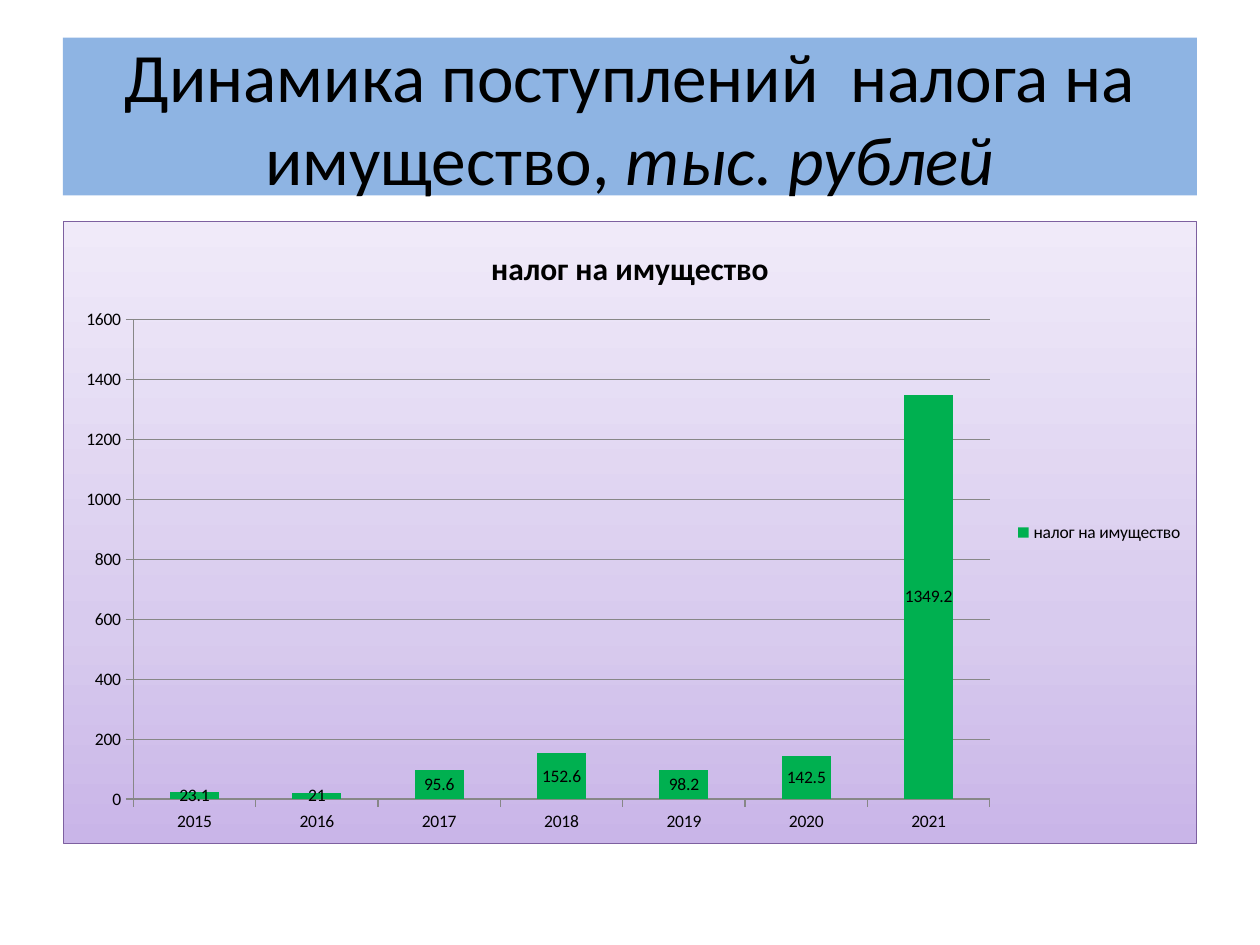
from lxml import etree
from pptx import Presentation, util as u
from pptx.chart.data import CategoryChartData
from pptx.dml.color import RGBColor
from pptx.enum import chart as ch, shapes, text

BLACK = RGBColor(0x00, 0x00, 0x00)
BLUE = RGBColor(0x8E, 0xB4, 0xE3)
GREEN = RGBColor(0x00, 0xB0, 0x50)
GREY = RGBColor(0x87, 0x87, 0x87)
PURPLE = RGBColor(0x7D, 0x60, 0xA0)
STOPS = [(0, "C9B5E8"), (35, "D8CBEE"), (100, "F0EAF9")]

NAME = "налог на имущество"
YEARS = [str(year) for year in range(2015, 2022)]
SUMS = [23.1, 21, 95.6, 152.6, 98.2, 142.5, 1349.2]


def add_run(para, words, size=10, bold=False, italic=False, color=BLACK):
    run = para.add_run()
    run.text = words
    font = run.font
    font.name, font.size = "Calibri", u.Pt(size)
    font.bold, font.italic = bold, italic
    font.color.rgb = color


def fill_area(chart):
    """Give the chart area its gradient and border."""
    stops = "".join(
        f'<a:gs pos="{pos * 1000}"><a:srgbClr val="{color}"/></a:gs>'
        for pos, color in STOPS)
    area = etree.fromstring(
        '<c:spPr xmlns:c="http://schemas.openxmlformats.org/drawingml/2006/chart"'
        ' xmlns:a="http://schemas.openxmlformats.org/drawingml/2006/main">'
        f'<a:gradFill><a:gsLst>{stops}</a:gsLst><a:lin ang="16200000" scaled="1"/>'
        f'</a:gradFill><a:ln w="{u.Pt(0.75)}"><a:solidFill>'
        f'<a:srgbClr val="{PURPLE}"/></a:solidFill></a:ln></c:spPr>')
    chart.element.find("{*}chart").addnext(area)


class Deck:
    """Slide style and the current slide."""

    left, width = u.Cm(1.27), u.Cm(22.86)

    def __init__(self):
        self.prs = Presentation()
        self.prs.slide_width, self.prs.slide_height = u.Cm(25.4), u.Cm(19.05)
        self.slide = self.prs.slides.add_slide(self.prs.slide_layouts[6])

    def banner(self, top, height, parts):
        box = self.slide.shapes.add_shape(
            shapes.MSO_SHAPE.RECTANGLE, self.left, top, self.width, height)
        box.shadow.inherit = False
        box.fill.solid()
        box.fill.fore_color.rgb = BLUE
        box.line.fill.background()
        frame = box.text_frame
        frame.word_wrap = True
        frame.vertical_anchor = text.MSO_ANCHOR.MIDDLE
        para = frame.paragraphs[0]
        para.alignment = text.PP_ALIGN.CENTER
        for words, italic in parts:
            add_run(para, words, size=39.6, italic=italic)

    def columns(self, top, height, name, cats, vals):
        data = CategoryChartData()
        data.categories = cats
        data.add_series(name, vals)
        chart = self.slide.shapes.add_chart(
            ch.XL_CHART_TYPE.COLUMN_STACKED, self.left, top, self.width, height,
            data).chart
        chart.font.name, chart.font.size = "Calibri", u.Pt(10)
        chart.font.color.rgb = BLACK
        fill_area(chart)

        # Title and legend
        chart.has_title = True
        add_run(chart.chart_title.text_frame.paragraphs[0], name, size=18, bold=True)
        chart.chart_title.include_in_layout = False
        chart.has_legend = True
        chart.legend.position = ch.XL_LEGEND_POSITION.RIGHT
        chart.legend.include_in_layout = False

        # Axes
        for axis in (chart.category_axis, chart.value_axis):
            axis.major_tick_mark = ch.XL_TICK_MARK.OUTSIDE
            axis.format.line.color.rgb = GREY
        chart.value_axis.has_major_gridlines = True
        chart.value_axis.major_gridlines.format.line.color.rgb = GREY

        # Columns and labels
        plot = chart.plots[0]
        plot.vary_by_categories = False
        plot.gap_width, plot.overlap = 150, 100
        bars = plot.series[0]
        bars.format.fill.solid()
        bars.format.fill.fore_color.rgb = GREEN
        bars.data_labels.show_value = True


def main():
    deck = Deck()
    deck.banner(u.Cm(0.76), u.Cm(3.18), [
        ("Динамика поступлений  налога на имущество, ", False),
        ("тыс. рублей", True)])
    deck.columns(u.Cm(4.45), u.Cm(12.57), NAME, YEARS, SUMS)
    deck.prs.save("out.pptx")


if __name__ == "__main__":
    main()
